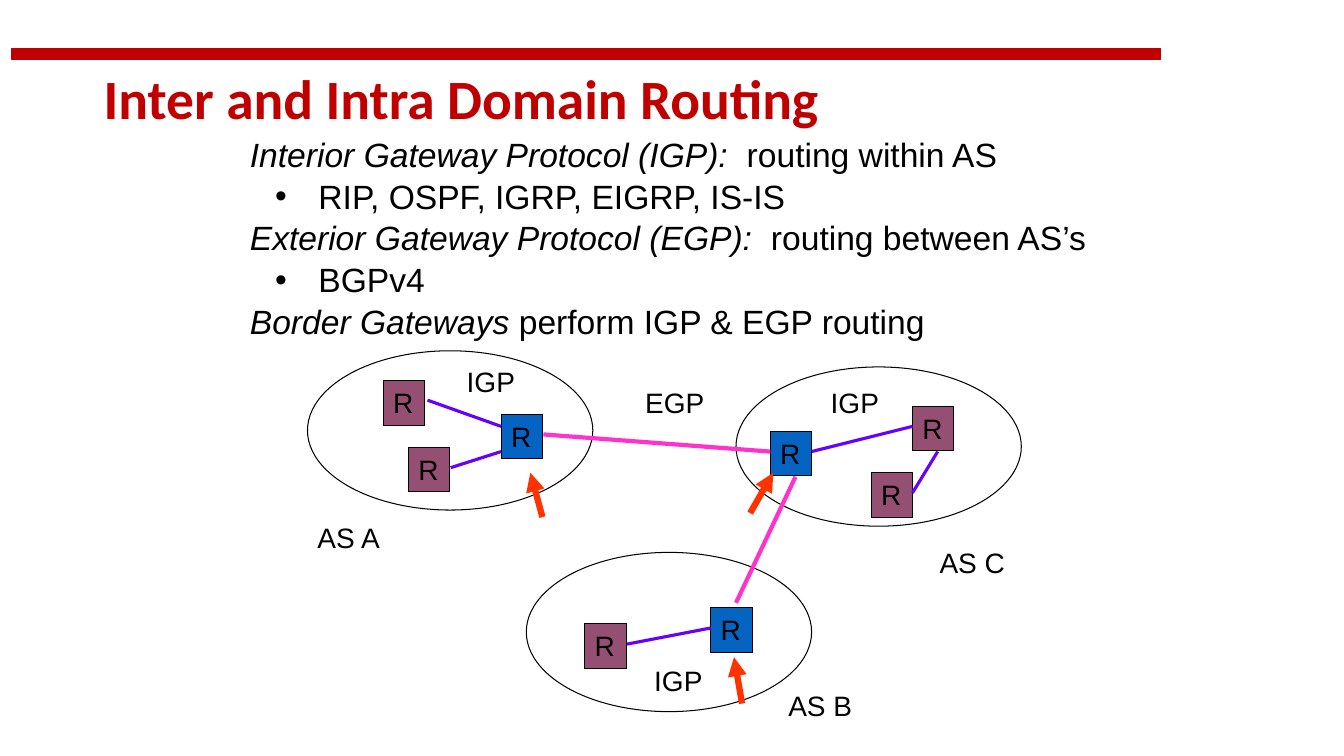
from lxml.etree import SubElement
from pptx import Presentation
from pptx.dml.color import RGBColor as RGB
from pptx.enum.shapes import MSO_CONNECTOR as LINK, MSO_SHAPE as SHAPE
from pptx.enum.text import MSO_ANCHOR as ANCHOR, MSO_AUTO_SIZE as FIT, PP_ALIGN as ALIGN
from pptx.oxml.ns import qn
from pptx.util import Inches, Pt

COLORS = {"red": "C00000", "black": "000000", "border": "0563C1",
          "inner": "954F72", "egp": "FF33CC", "igp": "6600FF", "arrow": "FF3300"}


def color(name):
    return RGB.from_string(COLORS[name])


def add_run(para, text, size, name="black", font="Arial", bold=False, italic=False):
    run = para.add_run()
    run.text = text
    face = run.font
    face.name, face.size = font, Pt(size)
    face.bold, face.italic = bold, italic
    face.color.rgb = color(name)


def add_box(slide, *area):
    frame = slide.shapes.add_textbox(*map(Inches, area)).text_frame
    frame.word_wrap = False
    return frame


def add_label(slide, text, x, y, width):
    frame = add_box(slide, x, y, width, 0.43)
    frame.auto_size = FIT.SHAPE_TO_FIT_TEXT
    add_run(frame.paragraphs[0], text, 20)


def add_form(slide, kind, area, fill=None, edge="black", weight=0.75):
    form = slide.shapes.add_shape(kind, *map(Inches, area))
    form.shadow.inherit = False
    if fill:
        form.fill.solid()
        form.fill.fore_color.rgb = color(fill)
    else:
        form.fill.background()
    form.line.color.rgb = color(edge)
    form.line.width = Pt(weight)
    return form


def add_router(slide, x, y, kind):
    frame = add_form(slide, SHAPE.RECTANGLE, (x, y, 0.41, 0.44), kind).text_frame
    frame.word_wrap = False
    frame.vertical_anchor = ANCHOR.TOP
    para = frame.paragraphs[0]
    para.alignment = ALIGN.LEFT
    add_run(para, "R", 20)


def add_line(slide, ends, name, weight, head=False):
    line = slide.shapes.add_connector(LINK.STRAIGHT, *map(Inches, ends))
    line.line.color.rgb = color(name)
    line.line.width = Pt(weight)
    if head:
        SubElement(line.line._ln, qn("a:tailEnd"), type="triangle")
    SubElement(line._element.spPr, qn("a:effectLst"))


def add_bullet(para):
    props = para._p.get_or_add_pPr()
    props.set("marL", str(Inches(0.68)))
    props.set("indent", str(Inches(-0.43)))
    SubElement(props, qn("a:buFont"), typeface="Arial")
    SubElement(props, qn("a:buChar"), char="•")


def add_title(slide):
    frame = add_box(slide, 0.93, 0.63, 8.5, 0.75)
    frame.word_wrap = True
    frame.vertical_anchor = ANCHOR.MIDDLE
    para = frame.paragraphs[0]
    para.line_spacing = 0.9
    add_run(para, "Inter and Intra Domain Routing", 39.6, "red", "Calibri", bold=True)


def add_notes(slide):
    # Each line: italic term, plain text; no term makes a bullet
    lines = [("Interior Gateway Protocol (IGP):  ", "routing within AS"),
             ("", "RIP, OSPF, IGRP, EIGRP, IS-IS"),
             ("Exterior Gateway Protocol (EGP):  ", "routing between AS’s"),
             ("", "BGPv4"),
             ("Border Gateways ", "perform IGP & EGP routing")]
    frame = add_box(slide, 2.38, 1.26, 8.69, 2.12)
    for i, (term, text) in enumerate(lines):
        para = frame.add_paragraph() if i else frame.paragraphs[0]
        para.line_spacing = 1.04
        if term:
            add_run(para, term, 24, italic=True)
        else:
            add_bullet(para)
        add_run(para, text, 24)


def main():
    deck = Presentation()
    deck.slide_width, deck.slide_height = Inches(13.33), Inches(7.5)
    slide = deck.slides.add_slide(deck.slide_layouts[6])

    # Heading
    add_form(slide, SHAPE.RECTANGLE, (0.12, 0.48, 11.39, 0.11), "red", "red", 1)
    add_title(slide)

    # Domains
    for x, y in [(3.05, 3.48), (5.22, 5.48), (7.3, 3.64)]:
        add_form(slide, SHAPE.OVAL, (x, y, 2.83, 1.58))

    # Routers
    routers = {"border": [(4.97, 4.11), (7.05, 6.03), (7.64, 4.28)],
               "inner": [(4.05, 4.44), (3.8, 3.78), (5.8, 6.19),
                         (8.64, 4.69), (9.05, 4.03)]}
    for kind, spots in routers.items():
        for x, y in spots:
            add_router(slide, x, y, kind)

    # Links between and within domains
    for ends in [(5.39, 4.31, 7.64, 4.48), (7.3, 5.98, 7.89, 4.73)]:
        add_line(slide, ends, "egp", 3)
    for ends in [(4.24, 3.97, 4.97, 4.23), (4.97, 4.48, 4.47, 4.64),
                 (6.22, 6.39, 7.05, 6.23), (9.05, 4.23, 8.05, 4.48),
                 (9.3, 4.48, 9.05, 4.89)]:
        add_line(slide, ends, "igp", 2.25)

    # Labels
    for label in [("AS A", 3.05, 5.11, 0.84), ("AS B", 7.72, 6.78, 0.84),
                  ("AS C", 9.22, 5.36, 0.85), ("IGP", 4.53, 3.57, 0.68),
                  ("EGP", 6.3, 3.78, 0.79), ("IGP", 8.14, 3.78, 0.68),
                  ("IGP", 6.39, 6.53, 0.68)]:
        add_label(slide, *label)
    add_notes(slide)

    # Arrows to the border gateways
    for ends in [(5.38, 5.13, 5.26, 4.69), (7.36, 6.98, 7.28, 6.52),
                 (7.44, 5.09, 7.67, 4.69)]:
        add_line(slide, ends, "arrow", 4.5, head=True)

    deck.save("out.pptx")


if __name__ == "__main__":
    main()
